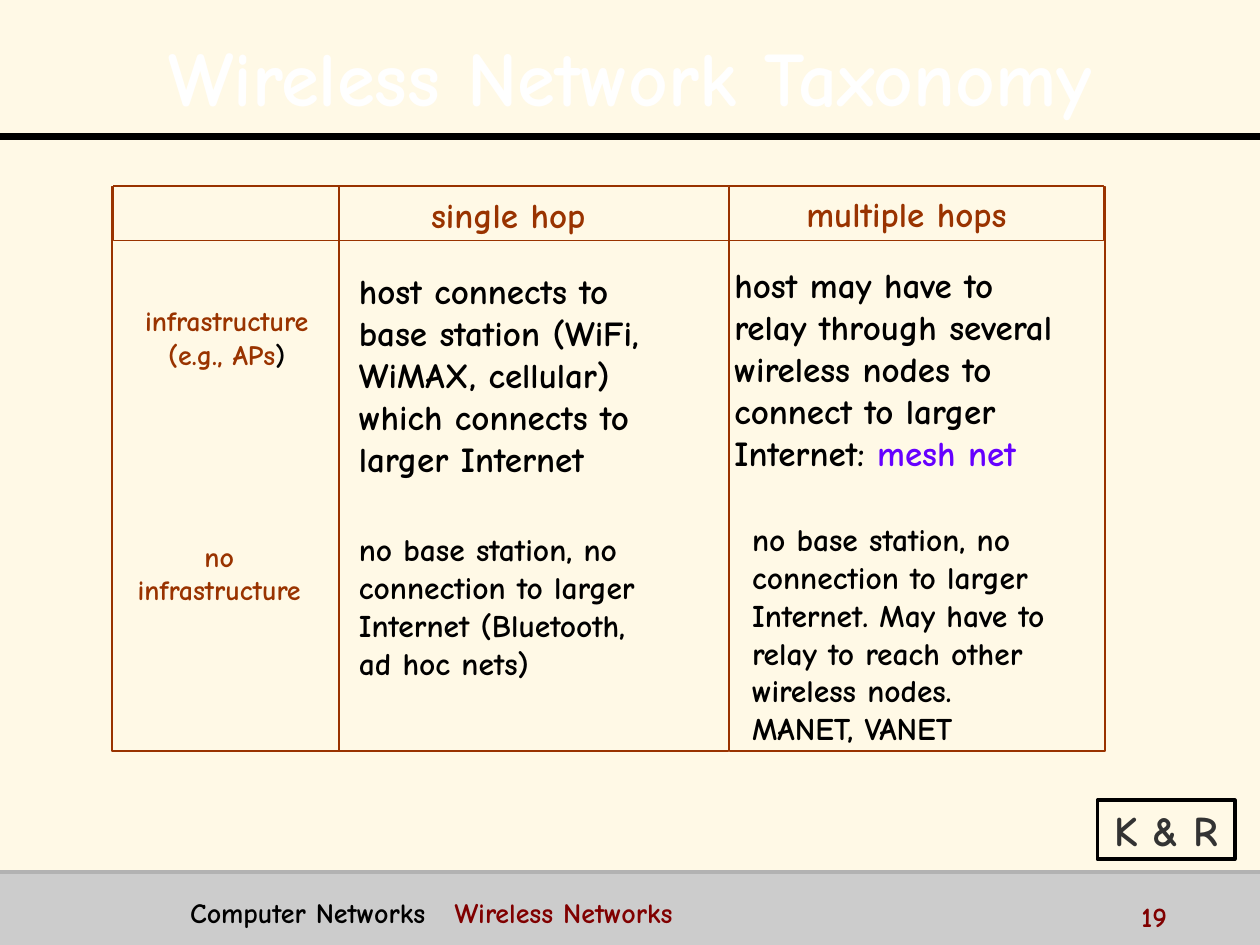
from dataclasses import dataclass

import lxml.etree
import pptx
import pptx.dml.color
import pptx.enum.shapes
import pptx.enum.text
import pptx.oxml.ns
import pptx.util

Inches = pptx.util.Inches
Pt = pptx.util.Pt
Align = pptx.enum.text.PP_ALIGN
Anchor = pptx.enum.text.MSO_ANCHOR
qn = pptx.oxml.ns.qn

FONT = "Comic Neue"
BLACK, WHITE, RUST, MAROON, VIOLET = "000000", "FFFFFF", "993300", "800000", "6600FF"


@dataclass
class Place:
    left: float
    top: float
    width: float
    height: float

    def lengths(self) -> list:
        return [Inches(v) for v in (self.left, self.top, self.width, self.height)]


@dataclass
class Label:
    """A text box; each line is a list of (text, colour) spans."""
    place: Place
    size: int
    lines: list
    align: Align = Align.LEFT
    wrap: bool = False


def plain(color: str, *lines: str) -> list:
    """Lines of one colour."""
    return [[(line, color)] for line in lines]


def rgb(color: str) -> pptx.dml.color.RGBColor:
    return pptx.dml.color.RGBColor.from_string(color)


def write(frame, lines: list, size: int, align: Align) -> None:
    for index, line in enumerate(lines):
        para = frame.add_paragraph() if index else frame.paragraphs[0]
        para.alignment = align
        for text, color in line:
            span = para.add_run()
            span.text = text
            span.font.name = FONT
            span.font.size = Pt(size)
            span.font.bold = True
            span.font.color.rgb = rgb(color)


def add_label(page, label: Label):
    box = page.shapes.add_textbox(*label.place.lengths())
    frame = box.text_frame
    frame.word_wrap = label.wrap
    if not label.wrap:
        frame.auto_size = pptx.enum.text.MSO_AUTO_SIZE.SHAPE_TO_FIT_TEXT
    write(frame, label.lines, label.size, label.align)
    return box


def add_rectangle(page, place: Place, fill: str = "", line: str = "", weight: float = 0.75):
    """Draw a rectangle; an empty colour leaves that part out."""
    box = page.shapes.add_shape(pptx.enum.shapes.MSO_SHAPE.RECTANGLE, *place.lengths())
    box.shadow.inherit = False
    for part, color in ((box.fill, fill), (box.line.fill, line)):
        if color:
            part.solid()
            part.fore_color.rgb = rgb(color)
        else:
            part.background()
    if line:
        box.line.width = Pt(weight)
    return box


def add_rule(page, top: float, color: str, weight: float) -> None:
    """Draw a horizontal line across the whole page."""
    rule = page.shapes.add_connector(
        pptx.enum.shapes.MSO_CONNECTOR.STRAIGHT, 0, Inches(top), Inches(10), Inches(top))
    rule.line.color.rgb = rgb(color)
    rule.line.width = Pt(weight)
    lxml.etree.SubElement(rule._element.spPr, qn("a:effectLst"))


def add_text_shadow(span) -> None:
    properties = span.font._element
    effects = lxml.etree.Element(qn("a:effectLst"))
    shadow = lxml.etree.SubElement(
        effects, qn("a:outerShdw"), dist="35921", dir="2700000", algn="tl")
    lxml.etree.SubElement(shadow, qn("a:srgbClr"), val=BLACK)
    properties.find(qn("a:solidFill")).addnext(effects)


def add_tab_stop(para, position: float) -> None:
    stops = lxml.etree.SubElement(para._p.get_or_add_pPr(), qn("a:tabLst"))
    lxml.etree.SubElement(stops, qn("a:tab"), pos=str(Inches(position)), algn="l")


def set_title(page, text: str) -> None:
    title = page.shapes.title
    title.left, title.top, title.width, title.height = Place(0.2, 0.13, 9.61, 0.87).lengths()
    frame = title.text_frame
    frame.auto_size = pptx.enum.text.MSO_AUTO_SIZE.NONE
    frame.vertical_anchor = Anchor.MIDDLE
    write(frame, plain(WHITE, text), 44, Align.CENTER)
    frame.paragraphs[0].line_spacing = 1.1
    add_text_shadow(frame.paragraphs[0].runs[0])


HEADINGS = [
    Label(Place(3.27, 1.49, 1.53, 0.44), 20, plain(RUST, "single hop"), Align.CENTER),
    Label(Place(6.22, 1.48, 1.95, 0.44), 20, plain(RUST, "multiple hops"), Align.CENTER),
    Label(Place(0.93, 2.36, 1.74, 0.64), 16,
          [[("infrastructure", RUST)], [("(e.g., APs", RUST), (")", BLACK)]], Align.CENTER),
    Label(Place(0.87, 4.23, 1.74, 0.64), 16, plain(RUST, "no", "infrastructure"), Align.CENTER),
]

GRID = [
    Place(0.9, 1.47, 7.86, 0.44),
    Place(0.89, 1.48, 1.8, 4.48),
    Place(2.69, 1.48, 3.09, 4.48),
    Place(5.79, 1.48, 2.98, 4.48),
]

CELLS = [
    Label(Place(2.75, 2.09, 2.83, 1.78), 20, plain(
        BLACK, "host connects to", "base station (WiFi,", "WiMAX, cellular)",
        "which connects to", "larger Internet")),
    Label(Place(2.75, 4.16, 2.82, 1.31), 18, plain(
        BLACK, "no base station, no", "connection to larger", "Internet (Bluetooth,",
        "ad hoc nets)")),
    Label(Place(5.73, 2.04, 3.11, 1.78), 20, plain(
        BLACK, "host may have to", "relay through several", "wireless nodes to",
        "connect to larger") + [[("Internet: ", BLACK), ("mesh net", VIOLET)]]),
    Label(Place(5.87, 4.08, 2.99, 1.92), 18, plain(
        BLACK, "no base station, no", "connection to larger", "Internet. May have to",
        "relay to reach other", "wireless nodes.", "MANET, VANET")),
]

FOOTER = Label(Place(1.41, 7.06, 7.28, 0.31), 16,
               [[("Computer Networks\t", BLACK), ("Wireless Networks", MAROON)]], wrap=True)
PAGE_NUMBER = Label(Place(8.96, 7.09, 1, 0.25), 16, plain(MAROON, "19"), wrap=True)


def main() -> None:
    deck = pptx.Presentation()
    deck.slide_width, deck.slide_height = Inches(10), Inches(7.5)
    page = deck.slides.add_slide(deck.slide_layouts[5])
    page.background.fill.solid()
    page.background.fill.fore_color.rgb = rgb("FFF9E6")

    add_rectangle(page, Place(0, 6.92, 10, 0.58), fill="CCCCCC")
    add_rule(page, 1.08, BLACK, 4)
    add_rule(page, 6.92, "B2B2B2", 2)
    set_title(page, "Wireless Network Taxonomy")

    for heading in HEADINGS:
        add_label(page, heading)
    for place in GRID:
        add_rectangle(page, place, line=RUST)
    for cell in CELLS:
        add_label(page, cell)

    credit = add_rectangle(page, Place(8.71, 6.35, 1.09, 0.47), line=BLACK, weight=2)
    credit.text_frame.word_wrap = False
    credit.text_frame.vertical_anchor = Anchor.MIDDLE
    write(credit.text_frame, plain("333333", "K & R"), 24, Align.CENTER)

    footer = add_label(page, FOOTER)
    add_tab_stop(footer.text_frame.paragraphs[0], 2.1)
    add_label(page, PAGE_NUMBER)
    deck.save("out.pptx")


if __name__ == "__main__":
    main()
